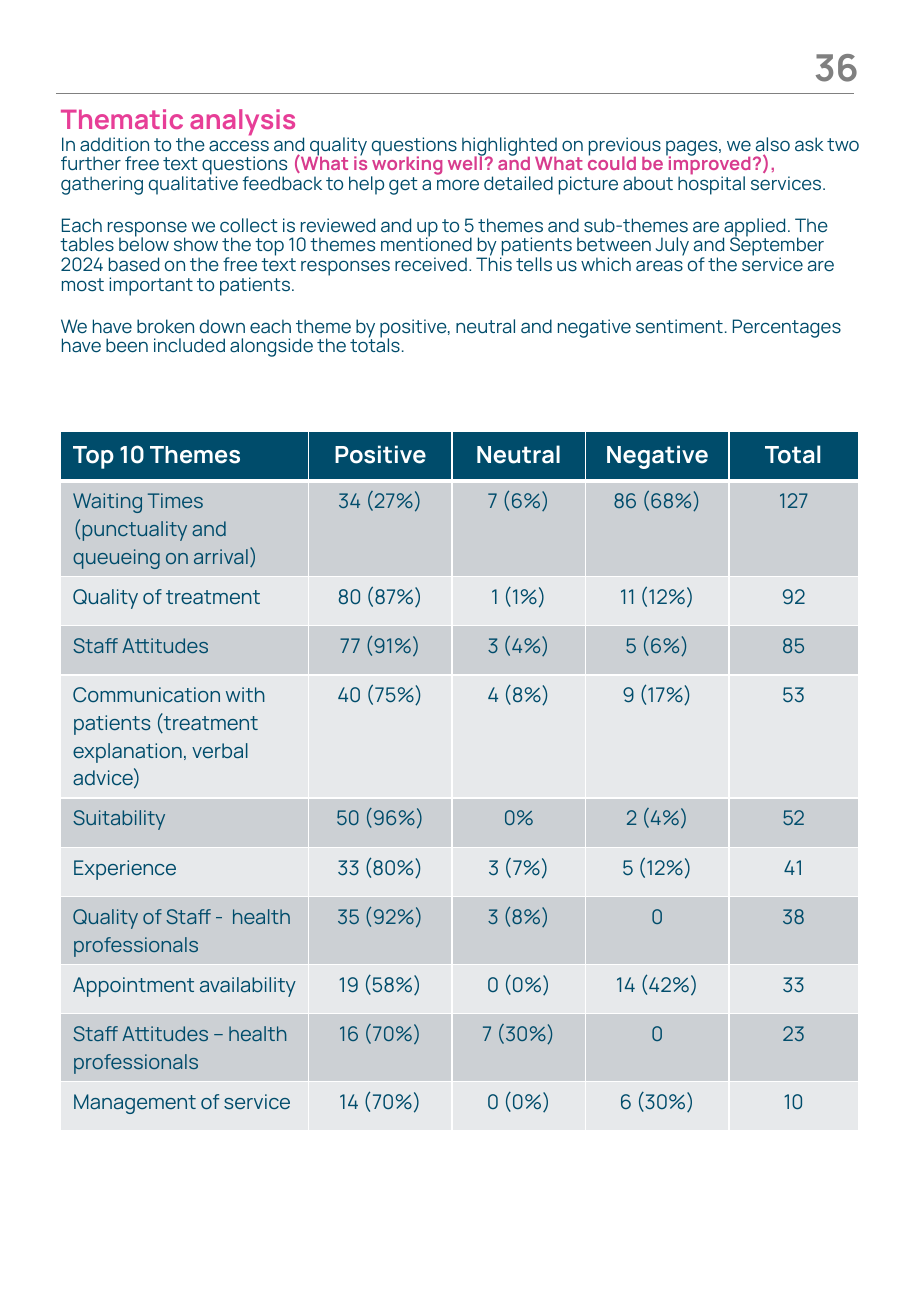
import pptx
import pptx.dml.color
import pptx.enum.shapes
import pptx.enum.text
import pptx.oxml
import pptx.oxml.ns
import pptx.util

Pt = pptx.util.Pt
ALIGN = pptx.enum.text.PP_ALIGN
COLORS = {
    "navy": "004C6B", "heading": "E73E97", "question": "D83C8E", "gray": "808080",
    "white": "FFFFFF", "dark_band": "CCD0D4", "light_band": "E7E9EB",
}
A_NS = pptx.oxml.ns.nsdecls("a")


def add_run(p, text, size=11, color="navy", bold=False):
    r = p.add_run()
    r.text = text
    r.font.name = "Manrope"
    r.font.size = Pt(size)
    r.font.bold = bold
    r.font.color.rgb = pptx.dml.color.RGBColor.from_string(COLORS[color])


def add_border(cell, side, width):
    """Draw a white border on one side of a cell: L, R, T or B."""
    cell._tc.get_or_add_tcPr().append(pptx.oxml.parse_xml(
        f'<a:ln{side} {A_NS} w="{Pt(width)}"><a:solidFill>'
        f'<a:srgbClr val="{COLORS["white"]}"/></a:solidFill></a:ln{side}>'))


prs = pptx.Presentation()
prs.slide_width, prs.slide_height = Pt(540), Pt(779.76)
s = prs.slides.add_slide(prs.slide_layouts[1])
title = s.shapes.title
title._element.getparent().remove(title._element)

# Header rule and page number
rule = s.shapes.add_connector(
    pptx.enum.shapes.MSO_CONNECTOR.STRAIGHT, Pt(33.1), Pt(55.4), Pt(506.2), Pt(55.4))
rule.line.color.rgb = pptx.dml.color.RGBColor.from_string(COLORS["gray"])
rule.line.width = Pt(0.75)
rule._element.spPr.append(pptx.oxml.parse_xml(f"<a:effectLst {A_NS}/>"))

page_number = s.shapes.add_textbox(Pt(463), Pt(26.6), Pt(46), Pt(28))
body = s.placeholders[1]
body.left, body.top, body.width, body.height = Pt(36), Pt(63.4), Pt(476), Pt(129.6)
for sp in (page_number, body):
    tf = sp.text_frame
    tf.word_wrap = True
    tf.auto_size = pptx.enum.text.MSO_AUTO_SIZE.NONE
    tf.vertical_anchor = pptx.enum.text.MSO_ANCHOR.TOP
    tf.margin_left = tf.margin_right = tf.margin_top = tf.margin_bottom = 0

p = page_number.text_frame.paragraphs[0]
p.alignment = ALIGN.RIGHT
add_run(p, "36", size=22, color="gray", bold=True)

# Heading and introduction: space before, then the runs of each paragraph
paragraphs = [
    (0, [("Thematic analysis", {"size": 16, "color": "heading", "bold": True})]),
    (0, [
        ("In addition to the access and quality questions highlighted on previous pages, "
         "we also ask two further free text questions ", {}),
        ("(What is working well? and What could be improved?), ",
         {"color": "question", "bold": True}),
        ("gathering qualitative feedback to help get a more detailed picture about "
         "hospital services.", {})]),
    (13.2, [
        ("Each response we collect is reviewed and up to 5 themes and sub-themes are "
         "applied. The tables below show the top 10 themes mentioned by patients between "
         "July and September 2024 based on the free text responses received. This tells us "
         "which areas of the service are most important to patients.", {})]),
    (13.2, [
        ("We have broken down each theme by positive, neutral and negative sentiment. "
         "Percentages have been included alongside the totals.", {})]),
]
tf = body.text_frame
for i, (space_before, runs) in enumerate(paragraphs):
    p = tf.add_paragraph() if i else tf.paragraphs[0]
    pPr = p._p.get_or_add_pPr()
    pPr.set("marL", "0")
    pPr.set("indent", "0")
    pPr.append(pptx.oxml.parse_xml(f"<a:buNone {A_NS}/>"))
    p.alignment = ALIGN.LEFT
    p.line_spacing = 0.88
    p.space_before = Pt(space_before)
    for text, style in runs:
        add_run(p, text, **style)

# Themes table
rows = [
    ("Top 10 Themes", "Positive", "Neutral", "Negative", "Total"),
    ("Waiting Times (punctuality and queueing on arrival)",
     "34 (27%)", "7 (6%)", "86 (68%)", "127"),
    ("Quality of treatment", "80 (87%)", "1 (1%)", "11 (12%)", "92"),
    ("Staff Attitudes", "77 (91%)", "3 (4%)", "5 (6%)", "85"),
    ("Communication with patients (treatment explanation, verbal advice)",
     "40 (75%)", "4 (8%)", "9 (17%)", "53"),
    ("Suitability", "50 (96%)", "0%", "2 (4%)", "52"),
    ("Experience", "33 (80%)", "3 (7%)", "5 (12%)", "41"),
    ("Quality of Staff -  health professionals", "35 (92%)", "3 (8%)", "0", "38"),
    ("Appointment availability", "19 (58%)", "0 (0%)", "14 (42%)", "33"),
    ("Staff Attitudes – health professionals", "16 (70%)", "7 (30%)", "0", "23"),
    ("Management of service", "14 (70%)", "0 (0%)", "6 (30%)", "10"),
]
column_widths = [147, 85, 79.2, 85, 76.6]
row_height = 29.2
table = s.shapes.add_table(
    len(rows), len(column_widths), Pt(36), Pt(255.8),
    Pt(sum(column_widths)), Pt(row_height * len(rows))).table
for column, width in zip(table.columns, column_widths):
    column.width = Pt(width)

for i, row in enumerate(rows):
    table.rows[i].height = Pt(row_height)
    if i == 0:
        fill, style = "navy", {"size": 14, "color": "white", "bold": True}
    else:
        fill, style = ("dark_band" if i % 2 else "light_band"), {"size": 12}
    for j, text in enumerate(row):
        cell = table.cell(i, j)
        for side in "LRTB":
            thick = (i == 0 and side == "B") or (i == 1 and side == "T")
            add_border(cell, side, 3 if thick else 1)
        cell.fill.solid()
        cell.fill.fore_color.rgb = pptx.dml.color.RGBColor.from_string(COLORS[fill])
        p = cell.text_frame.paragraphs[0]
        p.alignment = ALIGN.CENTER if j else ALIGN.LEFT
        add_run(p, text, **style)

prs.save("out.pptx")
